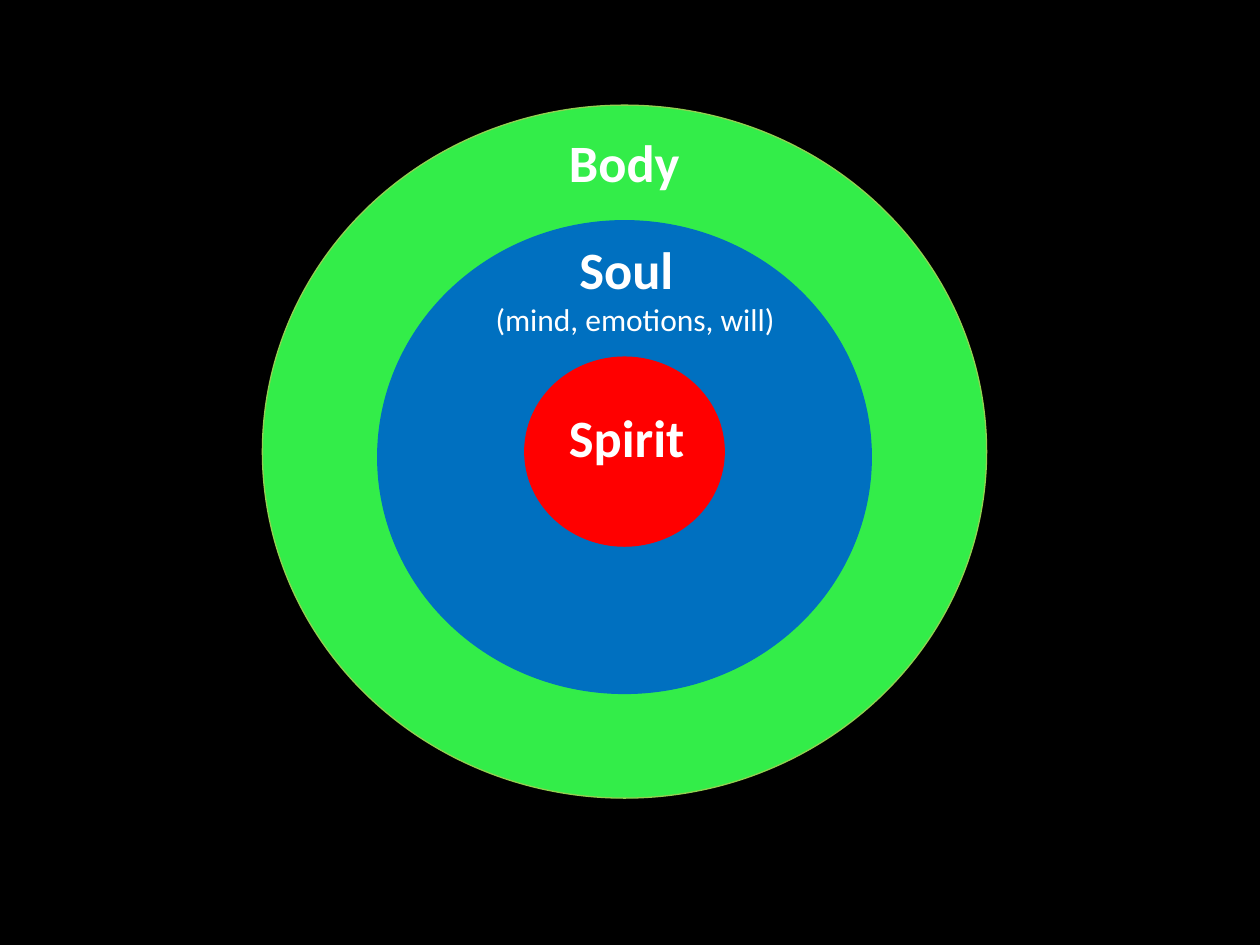
import pptx
import pptx.dml.color
import pptx.enum.shapes
import pptx.enum.text
import pptx.util

Cm = pptx.util.Cm
COLORS = {
    "background": "000000",
    "body": "33ED49",
    "body_edge": "92D050",
    "soul": "0070C0",
    "spirit": "FF0000",
    "text": "FFFFFF",
}
CENTER_X = 12.59


def rgb(name):
    return pptx.dml.color.RGBColor.from_string(COLORS[name])


def write(frame, text, size=30, bold=True, color="text", font="Calibri"):
    run = frame.paragraphs[0].add_run()
    run.text = text
    run.font.name = font
    run.font.size = pptx.util.Pt(size)
    run.font.bold = bold
    run.font.color.rgb = rgb(color)


class Diagram:
    def __init__(self, slide, line_width=0.75):
        self.slide = slide
        self.line_width = pptx.util.Pt(line_width)
        background = slide.background.fill
        background.solid()
        background.fore_color.rgb = rgb("background")

    def ring(self, top, width, height, fill, edge):
        """Draw an ellipse centred on the common vertical axis."""
        ellipse = self.slide.shapes.add_shape(
            pptx.enum.shapes.MSO_SHAPE.OVAL,
            Cm(CENTER_X - width / 2), Cm(top), Cm(width), Cm(height))
        ellipse.shadow.inherit = False
        ellipse.fill.solid()
        ellipse.fill.fore_color.rgb = rgb(fill)
        ellipse.line.color.rgb = rgb(edge)
        ellipse.line.width = self.line_width

    def label(self, text, left, top, width, height=1.53, **style):
        box = self.slide.shapes.add_textbox(Cm(left), Cm(top), Cm(width), Cm(height))
        box.text_frame.word_wrap = True
        box.text_frame.auto_size = pptx.enum.text.MSO_AUTO_SIZE.SHAPE_TO_FIT_TEXT
        write(box.text_frame, text, **style)


def main():
    deck = pptx.Presentation()
    deck.slide_width, deck.slide_height = Cm(25.4), Cm(19.05)
    diagram = Diagram(deck.slides.add_slide(deck.slide_layouts[6]))

    diagram.ring(2.12, 14.6, 13.97, "body", "body_edge")
    diagram.ring(4.45, 9.95, 9.53, "soul", "soul")
    diagram.ring(7.2, 4.02, 3.81, "spirit", "spirit")

    diagram.label("Spirit", 11.22, 8.04, 3.81)
    diagram.label("Soul", 11.43, 4.66, 2.96)
    diagram.label("Body", 11.22, 2.49, 3.18)
    diagram.label("(mind, emotions, will)", 9.74, 5.93, 8.68, 1.02, size=18, bold=False)

    deck.save("out.pptx")


if __name__ == "__main__":
    main()
